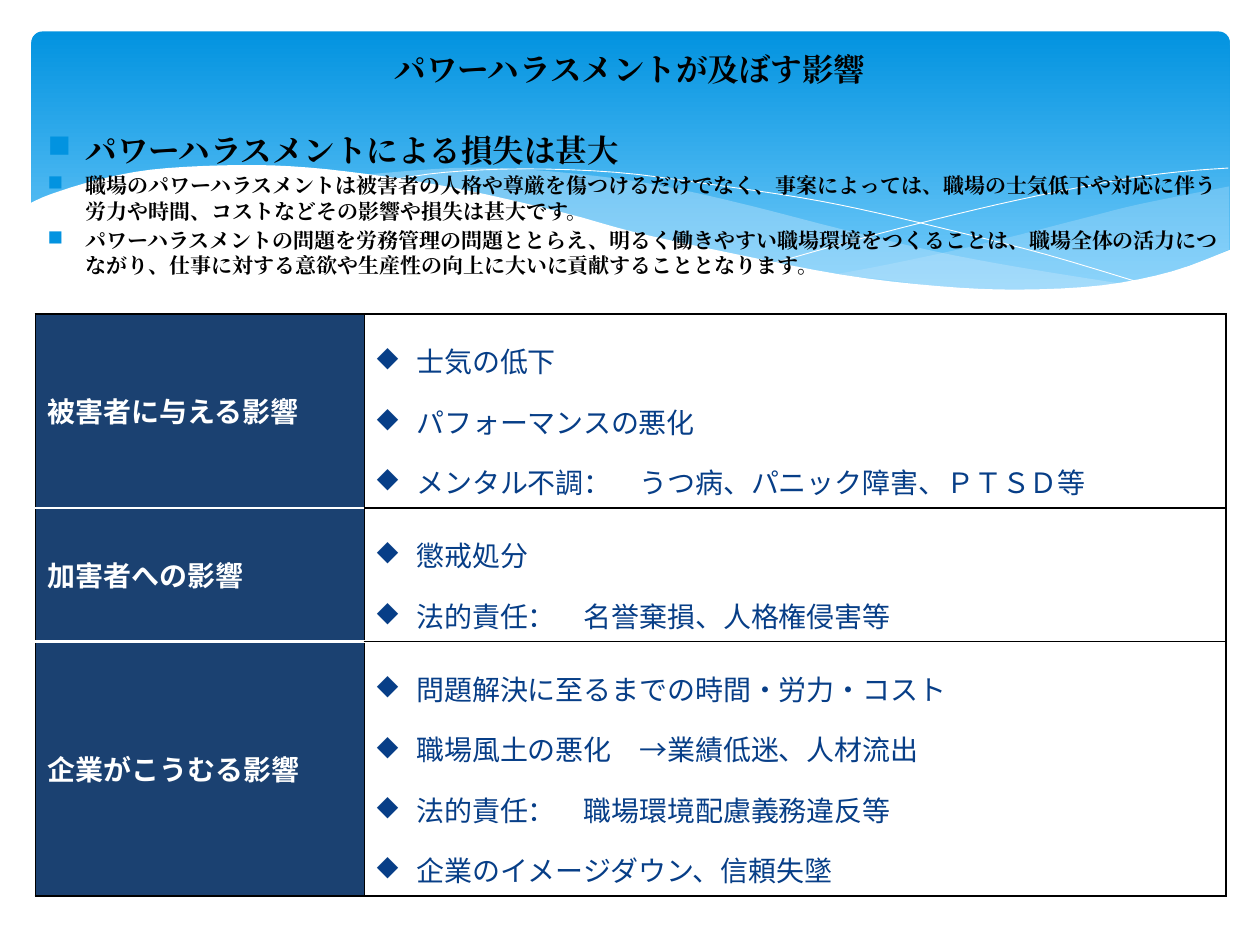
import pptx
import pptx.util
import pptx.dml.color
import pptx.enum.dml
import pptx.enum.shapes
import pptx.enum.text
import pptx.oxml
import pptx.oxml.ns

Pt = pptx.util.Pt
ANCHOR = pptx.enum.text.MSO_ANCHOR
ALIGN = pptx.enum.text.PP_ALIGN
COLORS = {"sky": "0293E0", "pale_sky": "83D3FE", "mist": "C6E7FC", "white": "FFFFFF",
          "black": "000000", "navy": "1B4171", "blue": "073E87"}

WHITE_EDGE = [(685.5, 124.5), (652, 137), (612, 145), (564, 147.5), (518, 145.5),
              (463, 139), (399, 126.5), (344, 114.5), (304, 103.5), (245, 90),
              (192, 81.5), (148, 77), (109, 76.5), (68, 79), (37, 85), (11, 93),
              (-1.5, 98.5)]
MIST_WAVES = [
    (29, [(684.5, 88.5), (634, 98.5), (602, 106.5), (543, 121.5), (490, 133), (458, 139)],
     [(458, 139), (490, 142), (527, 147), (568, 148.5), (603, 147), (639, 140.5),
      (665, 132.5), (684.5, 124.5)]),
    (40, [(625, 144.5), (563, 134.5), (515.5, 125.5), (463, 113), (412.5, 100),
          (371.5, 90.5), (334, 84), (284.5, 79), (242, 78), (188, 82)],
     [(188, 82), (228, 88), (273, 97), (335.5, 113), (389.5, 126), (450, 137.5),
      (502, 145.5), (555, 149), (599, 147.5), (625, 144.5)]),
]
WHITE_LINES = [
    [(204.5, 85), (236, 80.5), (281.5, 78.5), (334, 80.5), (382, 86.5), (440, 95),
     (482.5, 103.5), (529, 114.5), (580, 127.5), (635, 144)],
    [(423.5, 132.5), (482.5, 116), (540.5, 101.5), (584, 92), (626.5, 84),
     (657.5, 80), (684, 78)],
]
TITLE = "パワーハラスメントが及ぼす影響"
POINTS = [
    (18, 3.6, "パワーハラスメントによる損失は甚大"),
    (12, 2.4, "職場のパワーハラスメントは被害者の人格や尊厳を傷つけるだけでなく、"
              "事案によっては、職場の士気低下や対応に伴う労力や時間、コストなどその影響や損失は甚大です。"),
    (12, 2.4, "パワーハラスメントの問題を労務管理の問題ととらえ、明るく働きやすい職場環境をつくることは、"
              "職場全体の活力につながり、仕事に対する意欲や生産性の向上に大いに貢献することとなります。"),
]
EFFECTS = [
    (102, "被害者に与える影響",
     ["士気の低下", "パフォーマンスの悪化", "メンタル不調：　うつ病、パニック障害、ＰＴＳＤ等"]),
    (73.5, "加害者への影響", ["懲戒処分", "法的責任：　名誉棄損、人格権侵害等"]),
    (124.5, "企業がこうむる影響",
     ["問題解決に至るまでの時間・労力・コスト", "職場風土の悪化　→業績低迷、人材流出",
      "法的責任：　職場環境配慮義務違反等", "企業のイメージダウン、信頼失墜"]),
]


def rgb(name):
    return pptx.dml.color.RGBColor.from_string(COLORS[name])


def add_xml(parent, text, index=None):
    namespace = pptx.oxml.ns.nsdecls("a")
    element = pptx.oxml.parse_xml(text.replace(" ", f" {namespace} ", 1))
    parent.insert(len(parent) if index is None else index, element)


def write(para, text, color, east_asian=False, **formats):
    span = para.add_run()
    span.text = text
    for key, value in formats.items():
        setattr(span.font, key, value)
    span.font.color.rgb = rgb(color)
    if east_asian:
        add_xml(span.font._element, f'<a:ea typeface="{span.font.name}"/>')


def add_bullet(para, mark, color, indent):
    props = para._p.get_or_add_pPr()
    props.set("marL", str(Pt(indent)))
    props.set("indent", str(-Pt(indent)))
    add_xml(props, f'<a:buClr ><a:srgbClr val="{COLORS[color]}"/></a:buClr>')
    add_xml(props, f'<a:buChar char="{mark}"/>')


def smooth(points, steps=4):
    padded = [points[0], *points, points[-1]]
    curve = [points[0]]
    for before, start, end, after in zip(padded, padded[1:], padded[2:], padded[3:]):
        for step in range(1, steps + 1):
            t = step / steps
            curve.append(tuple(
                0.5 * (2 * b + (c - a) * t + (2 * a - 5 * b + 4 * c - d) * t ** 2
                       + (3 * b - a - 3 * c + d) * t ** 3)
                for a, b, c, d in zip(before, start, end, after)))
    return curve


def add_outline(page, box, points, closed=True):
    spots = [(Pt(box[0] + x), Pt(box[1] + y)) for x, y in points]
    builder = page.shapes.build_freeform(*spots[0])
    builder.add_line_segments(spots[1:], close=closed)
    shape = builder.convert_to_shape()
    shape.shadow.inherit = False
    if closed:
        shape.fill.solid()
        shape.line.fill.background()
    else:
        shape.fill.background()
        shape.line.color.rgb = rgb("white")
        shape.line.width = Pt(0.5)
    return shape


def add_banner(page, box):
    panel = page.shapes.add_shape(pptx.enum.shapes.MSO_SHAPE.ROUNDED_RECTANGLE, *map(Pt, box))
    panel.adjustments[0] = 0.034
    panel.shadow.inherit = False
    panel.line.fill.background()
    panel.fill.gradient()
    panel.fill.gradient_angle = 270
    for stop, color, position in zip(panel.fill.gradient_stops, ("sky", "pale_sky"), (0, 0.9)):
        stop.color.rgb = rgb(color)
        stop.position = position
    for opacity, top, bottom in MIST_WAVES:
        wave = add_outline(page, box, smooth(top) + smooth(bottom)[1:])
        wave.fill.fore_color.rgb = rgb("mist")
        tint = wave._element.spPr.find(".//" + pptx.oxml.ns.qn("a:srgbClr"))
        add_xml(tint, f'<a:alpha val="{opacity * 1000}"/>')
    for points in WHITE_LINES:
        add_outline(page, box, smooth(points), closed=False)
    floor = box[3] + 6
    cover = add_outline(page, box, smooth(WHITE_EDGE) + [(-1.5, floor), (685.5, floor)])
    cover.fill.fore_color.rgb = rgb("white")


def add_points(page, box):
    frame = page.shapes.add_textbox(*map(Pt, box)).text_frame
    frame.word_wrap = True
    for index, (size, gap, text) in enumerate(POINTS):
        para = frame.add_paragraph() if index else frame.paragraphs[0]
        para.space_before = Pt(gap)
        add_bullet(para, "■", "sky", 21.6)
        write(para, text, "black", True, name="Cambria", size=Pt(size), bold=True)


def place_title(page, box):
    title = page.shapes.title
    title.left, title.top, title.width, title.height = map(Pt, box)
    frame = title.text_frame
    frame.vertical_anchor = ANCHOR.MIDDLE
    para = frame.paragraphs[0]
    para.alignment = ALIGN.CENTER
    write(para, TITLE, "black", True, name="Cambria", size=Pt(18), bold=True)
    title.element.getparent().append(title.element)


def set_borders(cell, **special):
    for index, side in enumerate("LRTB"):
        color, width = special.get(side, ("black", 1))
        add_xml(cell._tc.get_or_add_tcPr(),
                f'<a:ln{side} w="{Pt(width)}"><a:solidFill>'
                f'<a:srgbClr val="{COLORS[color]}"/></a:solidFill></a:ln{side}>', index)


def add_effects(page, box):
    table = page.shapes.add_table(len(EFFECTS), 2, *map(Pt, box)).table
    table.first_row = table.horz_banding = False
    table.columns[0].width = Pt(188)
    table.columns[1].width = Pt(box[2] - 188)
    font = {"name": "Cabin", "size": Pt(16)}
    divider = ("white", 1.5)
    for row, (height, heading, items) in enumerate(EFFECTS):
        table.rows[row].height = Pt(height)
        head, detail = table.cell(row, 0), table.cell(row, 1)
        head.vertical_anchor = ANCHOR.MIDDLE
        head.fill.solid()
        head.fill.fore_color.rgb = rgb("navy")
        write(head.text_frame.paragraphs[0], heading, "white", bold=True, **font)
        borders = {"T": divider} if row else {}
        if row < len(EFFECTS) - 1:
            borders["B"] = divider
        set_borders(head, **borders)
        detail.fill.background()
        set_borders(detail)
        frame = detail.text_frame
        for index, item in enumerate(items):
            para = frame.add_paragraph() if index else frame.paragraphs[0]
            para.line_spacing = 1.5
            add_bullet(para, "◆", "blue", 22.5)
            write(para, item, "blue", bold=False, **font)


def main():
    deck = pptx.Presentation()
    deck.slide_width, deck.slide_height = Pt(720), Pt(540)
    page = deck.slides.add_slide(deck.slide_layouts[5])
    add_banner(page, (18, 18, 684.7, 182.2))
    add_points(page, (20.2, 71.3, 688.3, 430.6))
    place_title(page, (36, 18, 648, 42.5))
    add_effects(page, (20.2, 179.3, 680.4, 300))
    deck.save("out.pptx")


if __name__ == "__main__":
    main()
